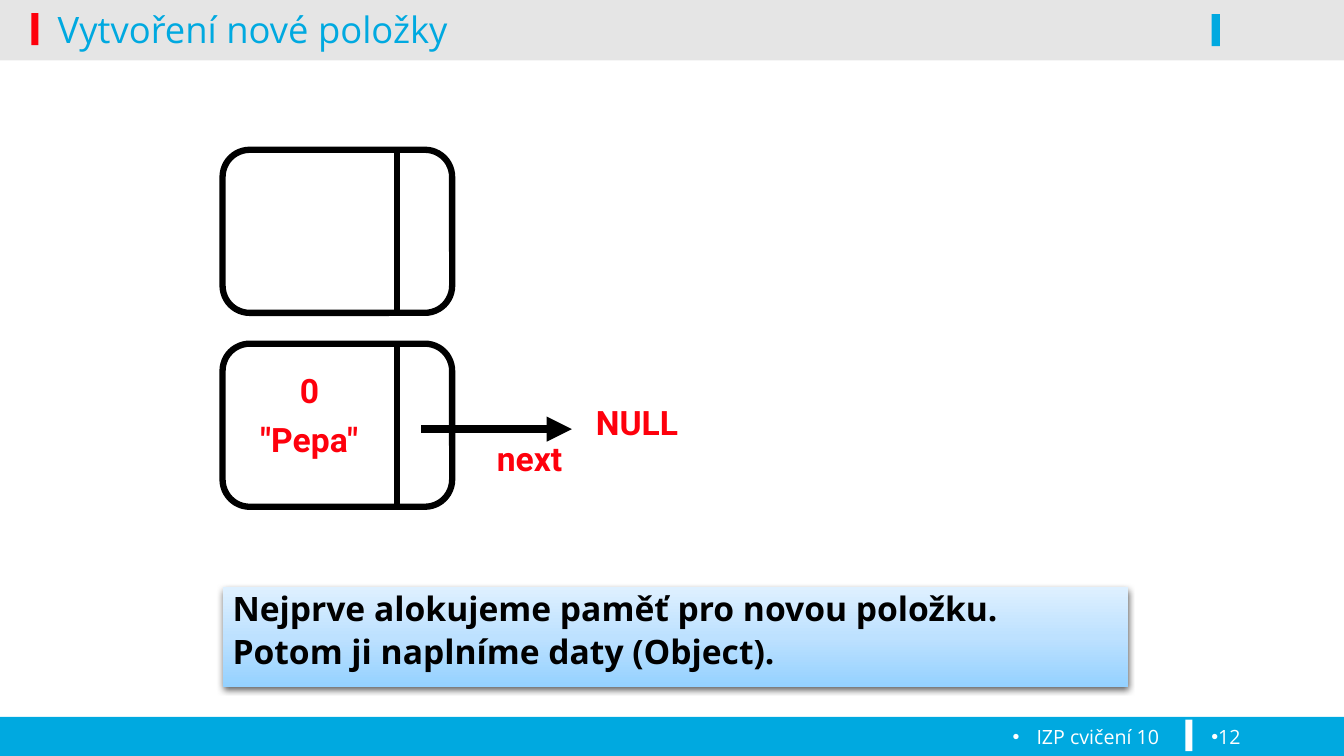
from typing import NamedTuple

import pptx
import pptx.dml.color
import pptx.enum.shapes
import pptx.enum.text
import pptx.oxml
import pptx.oxml.ns
import pptx.util

Pt = pptx.util.Pt
Kind = pptx.enum.shapes.MSO_SHAPE
Align = pptx.enum.text.PP_ALIGN
Anchor = pptx.enum.text.MSO_ANCHOR
COLORS = {"blue": "00A9E0", "red": "FE000C", "white": "FFFFFF", "black": "000000",
          "deep": "94D1FF", "mid": "BDE1FF", "pale": "DEF0FF"}
NS = 'xmlns:a="http://schemas.openxmlformats.org/drawingml/2006/main"'
WIDTH, HEIGHT = 960, 540


class Bar(NamedTuple):
    left: float
    top: float
    width: float
    height: float
    color: str
    alpha: int = 100


class Label(NamedTuple):
    text: str
    left: float
    top: float
    width: float
    height: float
    size: float = 24
    font: str = "Roboto"
    color: str = "red"
    bold: bool = True
    align: Align = Align.CENTER
    before: float = 6
    spacing: float = 1
    indent: float | None = None  # hanging indent of a bullet


class Line(NamedTuple):
    left: float
    top: float
    right: float
    bottom: float
    weight: float = 4.5
    arrow: bool = False


def rgb(name: str) -> pptx.dml.color.RGBColor:
    return pptx.dml.color.RGBColor.from_string(COLORS[name])


def node(xml: str):
    return pptx.oxml.parse_xml(xml.replace(">", f" {NS}>", 1) if "/>" not in xml[:xml.index(">") + 1]
                               else xml.replace("/>", f" {NS}/>", 1))


def add_bar(slide, bar: Bar, kind: Kind = Kind.RECTANGLE):
    shape = slide.shapes.add_shape(kind, Pt(bar.left), Pt(bar.top), Pt(bar.width), Pt(bar.height))
    shape.shadow.inherit = False
    shape.fill.solid()
    shape.fill.fore_color.rgb = rgb(bar.color)
    shape.line.fill.background()
    if bar.alpha < 100:
        color = shape.fill._xPr.find(".//" + pptx.oxml.ns.qn("a:srgbClr"))
        color.append(node(f'<a:alpha val="{bar.alpha * 1000}"/>'))
    return shape


def set_text(shape, label: Label) -> None:
    frame = shape.text_frame
    frame.text = label.text
    frame.word_wrap = True
    for index, para in enumerate(frame.paragraphs):
        para.alignment = label.align
        para.line_spacing = label.spacing
        if index:
            para.space_before = Pt(label.before)
        if label.indent is not None:
            props = para._p.get_or_add_pPr()
            props.set("marL", str(Pt(label.indent)))
            props.set("indent", str(-Pt(label.indent)))
            props.append(node('<a:buFont typeface="Arial"/>'))
            props.append(node('<a:buChar char="•"/>'))
        for run in para.runs:
            run.font.size = Pt(label.size)
            run.font.name = label.font
            run.font.bold = label.bold
            run.font.color.rgb = rgb(label.color)


def place(shape, label: Label) -> None:
    shape.left, shape.top = Pt(label.left), Pt(label.top)
    shape.width, shape.height = Pt(label.width), Pt(label.height)


def add_label(slide, label: Label) -> None:
    box = slide.shapes.add_textbox(0, 0, 0, 0)
    place(box, label)
    set_text(box, label)


def add_line(slide, line: Line) -> None:
    shape = slide.shapes.add_connector(pptx.enum.shapes.MSO_CONNECTOR.STRAIGHT, Pt(line.left),
                                       Pt(line.top), Pt(line.right), Pt(line.bottom))
    shape.line.color.rgb = rgb("black")
    shape.line.width = Pt(line.weight)
    if line.arrow:
        shape.line._get_or_add_ln().append(node('<a:tailEnd type="triangle"/>'))
    shape._element.spPr.append(node("<a:effectLst/>"))


def add_item(slide, top: float) -> None:
    """Draw a list item: a rounded box with a divider."""
    box = add_bar(slide, Bar(159, top, 164, 116.5, "white"), Kind.ROUNDED_RECTANGLE)
    box.line.color.rgb = rgb("black")
    box.line.width = Pt(4.5)
    add_line(slide, Line(283.5, top, 283.5, top + 116.5))


def add_note(slide, label: Label) -> None:
    """Draw the shaded note with its gradient and shadow."""
    box = add_bar(slide, Bar(label.left, label.top, label.width, label.height, "mid"))
    props = box._element.spPr
    stops = "".join(f'<a:gs pos="{pos * 1000}"><a:srgbClr val="{COLORS[name]}"/></a:gs>'
                    for pos, name in ((0, "deep"), (50, "mid"), (100, "pale")))
    props.replace(props.find(pptx.oxml.ns.qn("a:solidFill")), node(
        f'<a:gradFill rotWithShape="1"><a:gsLst>{stops}</a:gsLst>'
        '<a:lin ang="16200000" scaled="0"/></a:gradFill>'))
    props.find(pptx.oxml.ns.qn("a:effectLst")).append(node(
        f'<a:outerShdw blurRad="{Pt(4.5)}" dist="{Pt(1.5)}" dir="5400000" rotWithShape="0">'
        f'<a:srgbClr val="{COLORS["black"]}"><a:alpha val="63000"/></a:srgbClr></a:outerShdw>'))
    box.text_frame.vertical_anchor = Anchor.TOP
    set_text(box, label)


BARS = [
    Bar(0, 512, WIDTH, 28, "blue"),
    Bar(0, 40.3, WIDTH, 2.9, "black", 10),
    Bar(0, 0, WIDTH, 40.3, "black", 10),
    Bar(22.5, 9.3, 5, 23, "red"),
    Bar(846.7, 514, 5, 22.5, "white"),
    Bar(865.5, 10, 5.8, 23, "blue"),
]
TITLE = Label("Vytvoření nové položky", 34, -8, 828, 57, 26, "Open Sans", "blue", False, Align.LEFT)
FOOT = Label("IZP cvičení 10", 11.5, 514, 823.7, 26, 14, "Open Sans", "white", False,
             Align.RIGHT, indent=17)
PAGE = FOOT._replace(text="12", left=858.2, width=87, align=Align.LEFT, indent=0)
LABELS = [
    FOOT, PAGE,
    Label('0\n"Pepa"', 125.3, 260.6, 191.5, 86.4),
    Label("next", 316.8, 309.6, 123, 44),
    Label("NULL", 415.4, 283.7, 79.2, 44),
]
NOTE = Label("Nejprve alokujeme paměť pro novou položku.\nPotom ji naplníme daty (Object).",
             159, 419.5, 646.6, 71.3, font="Open Sans", color="black", align=Align.LEFT,
             before=5, spacing=0.9)


def main() -> None:
    deck = pptx.Presentation()
    deck.slide_width, deck.slide_height = Pt(WIDTH), Pt(HEIGHT)
    slide = deck.slides.add_slide(deck.slide_layouts[5])

    # Header and footer bands
    for bar in BARS:
        add_bar(slide, bar)

    # Title, brought in front of the bands
    title = slide.shapes.title
    place(title, TITLE)
    set_text(title, TITLE)
    title.text_frame.vertical_anchor = Anchor.MIDDLE
    slide.shapes._spTree.append(title._element)

    # List items and the link to NULL
    for top in (107, 245.5):
        add_item(slide, top)
    add_line(slide, Line(301, 306.5, 408.5, 306.5, 6, True))

    # Texts
    for label in LABELS:
        add_label(slide, label)
    add_note(slide, NOTE)
    deck.save("out.pptx")


if __name__ == "__main__":
    main()
